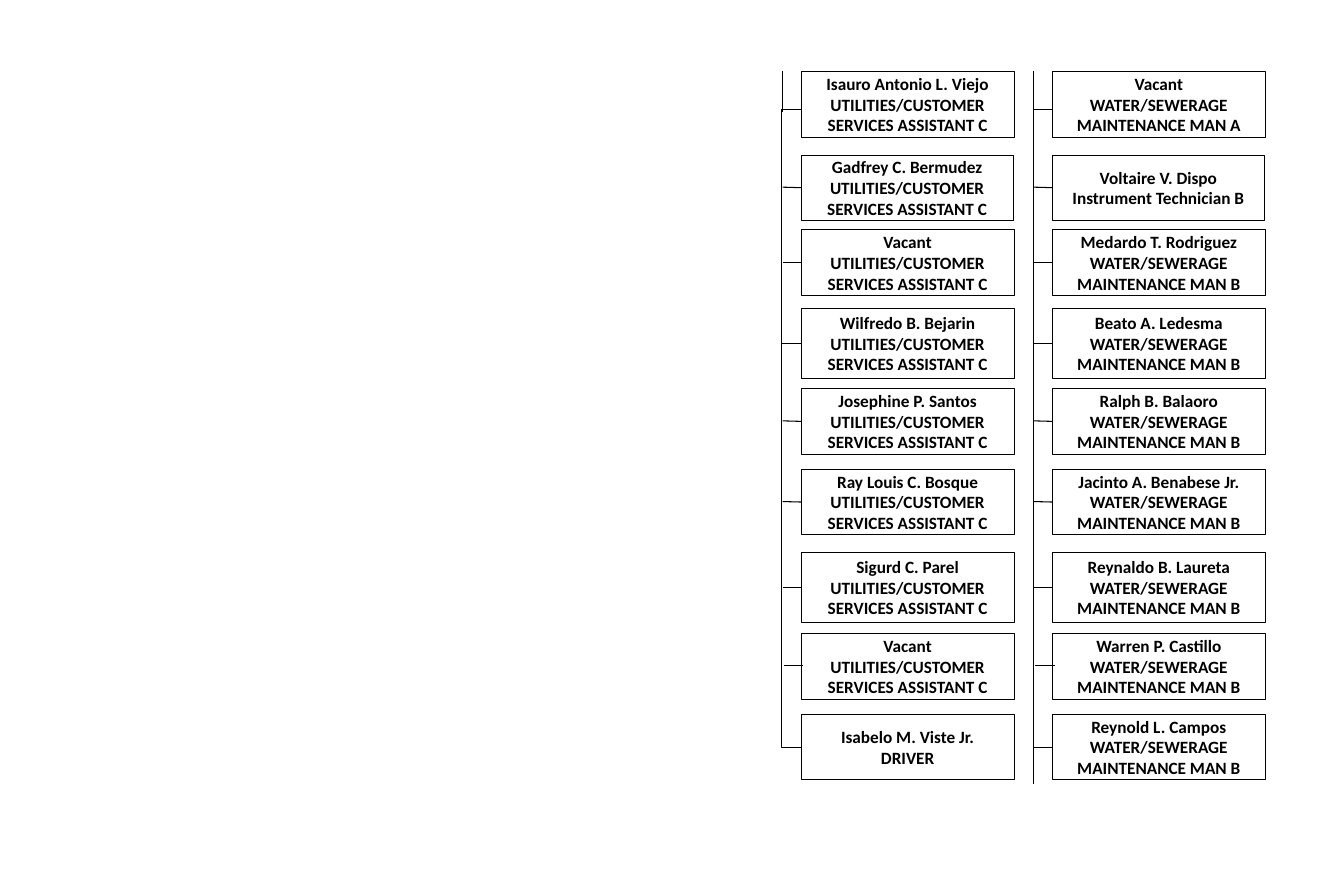
"""Build the two staff columns of an organisation chart."""

from dataclasses import dataclass

import lxml.etree
import pptx
import pptx.dml.color
import pptx.enum.dml
import pptx.enum.shapes
import pptx.enum.text
import pptx.oxml.ns
import pptx.util
from pptx.shapes.autoshape import Shape
from pptx.shapes.connector import Connector
from pptx.slide import Slide

EMU_PER_PX = 9144
BLACK = "000000"
WHITE = "FFFFFF"
STRAIGHT = pptx.enum.shapes.MSO_CONNECTOR.STRAIGHT
ELBOW = pptx.enum.shapes.MSO_CONNECTOR.ELBOW
RAIL_GAP = 18
BRACKET_GAP = 19
BRACKET_TOP = 106
BRACKET_BOTTOM = 723

ASSISTANT = ("UTILITIES/CUSTOMER", "SERVICES ASSISTANT C")
MAINTENANCE_A = ("WATER/SEWERAGE", "MAINTENANCE MAN A")
MAINTENANCE_B = ("WATER/SEWERAGE", "MAINTENANCE MAN B")


@dataclass(frozen=True)
class Row:
    top: int
    height: int
    width: int = 206
    has_stub: bool = True
    stub_gap: int = RAIL_GAP
    overlap: int = 0


@dataclass(frozen=True)
class Position:
    holder: str
    duties: tuple[str, ...]


@dataclass(frozen=True)
class Column:
    left: int
    positions: tuple[Position, ...]
    rail_spans: tuple[tuple[int, int], ...]


ROWS = (
    Row(69, 64, has_stub=False),
    Row(150, 63, width=205),
    Row(222, 64),
    Row(298, 68, stub_gap=19),
    Row(376, 63),
    Row(454, 63),
    Row(534, 68),
    Row(613, 63, stub_gap=17, overlap=2),
    Row(691, 63, has_stub=False),
)

COLUMNS = (
    Column(
        775,
        (
            Position("Isauro Antonio L. Viejo", ASSISTANT),
            Position("Gadfrey C. Bermudez", ASSISTANT),
            Position("Vacant", ASSISTANT),
            Position("Wilfredo B. Bejarin", ASSISTANT),
            Position("Josephine P. Santos", ASSISTANT),
            Position("Ray Louis C. Bosque", ASSISTANT),
            Position("Sigurd C. Parel", ASSISTANT),
            Position("Vacant", ASSISTANT),
            Position("Isabelo M. Viste Jr.", ("DRIVER",)),
        ),
        ((108, 69),),
    ),
    Column(
        1018,
        (
            Position("Vacant", MAINTENANCE_A),
            Position("Voltaire V. Dispo", ("Instrument Technician B",)),
            Position("Medardo T. Rodriguez", MAINTENANCE_B),
            Position("Beato A. Ledesma", MAINTENANCE_B),
            Position("Ralph B. Balaoro", MAINTENANCE_B),
            Position("Jacinto A. Benabese Jr.", MAINTENANCE_B),
            Position("Reynaldo B. Laureta", MAINTENANCE_B),
            Position("Warren P. Castillo", MAINTENANCE_B),
            Position("Reynold L. Campos", MAINTENANCE_B),
        ),
        ((108, 69), (717, 758)),
    ),
)


def px(length: int) -> pptx.util.Emu:
    return pptx.util.Emu(length * EMU_PER_PX)


def color(value: str) -> pptx.dml.color.RGBColor:
    return pptx.dml.color.RGBColor.from_string(value)


def draw_box(slide: Slide, left: int, row: Row, position: Position) -> Shape:
    shape = slide.shapes.add_shape(
        pptx.enum.shapes.MSO_SHAPE.RECTANGLE,
        px(left), px(row.top), px(row.width), px(row.height),
    )
    shape.shadow.inherit = False
    shape.fill.solid()
    shape.fill.fore_color.rgb = color(WHITE)
    shape.line.color.rgb = color(BLACK)
    shape.line.width = pptx.util.Pt(0.5)
    frame = shape.text_frame
    frame.word_wrap = True
    frame.vertical_anchor = pptx.enum.text.MSO_ANCHOR.MIDDLE
    for index, text in enumerate((position.holder, *position.duties)):
        paragraph = frame.add_paragraph() if index else frame.paragraphs[0]
        paragraph.alignment = pptx.enum.text.PP_ALIGN.CENTER
        run = paragraph.add_run()
        run.text = text
        run.font.name = "Calibri"
        run.font.size = pptx.util.Pt(12)
        run.font.bold = True
        run.font.color.rgb = color(BLACK)
    return shape


def draw_line(
    slide: Slide,
    start: tuple[int, int],
    end: tuple[int, int],
    kind: pptx.enum.shapes.MSO_CONNECTOR = STRAIGHT,
) -> Connector:
    connector = slide.shapes.add_connector(kind, *map(px, start + end))
    connector.line.color.rgb = color(BLACK)
    connector.line.width = pptx.util.Pt(0.75)
    lxml.etree.SubElement(connector.element.spPr, pptx.oxml.ns.qn("a:effectLst"))
    return connector


def draw_bracket(slide: Slide, left: int) -> None:
    connector = draw_line(
        slide, (left + 1, BRACKET_BOTTOM), (left, BRACKET_TOP), ELBOW
    )
    adjustments = next(connector.element.iter(pptx.oxml.ns.qn("a:avLst")))
    guide = lxml.etree.SubElement(adjustments, pptx.oxml.ns.qn("a:gd"))
    guide.set("name", "adj1")
    guide.set("fmla", f"val {(BRACKET_GAP + 1) * 100000}")


def draw_stub(slide: Slide, left: int, row: Row, box: Shape) -> None:
    middle = row.top + row.height // 2
    connector = draw_line(
        slide, (left + row.overlap, middle), (left - row.stub_gap, middle)
    )
    if not row.overlap:
        connector.begin_connect(box, 1)


def draw_column(slide: Slide, column: Column) -> None:
    for row, position in zip(ROWS, column.positions):
        box = draw_box(slide, column.left, row, position)
        if row.has_stub:
            draw_stub(slide, column.left, row, box)
    draw_bracket(slide, column.left)
    rail = column.left - RAIL_GAP
    for start, end in column.rail_spans:
        draw_line(slide, (rail, start), (rail, end))


def main() -> None:
    presentation = pptx.Presentation()
    presentation.slide_width = px(1300)
    presentation.slide_height = px(850)
    slide = presentation.slides.add_slide(presentation.slide_layouts[6])
    slide.background.fill.solid()
    slide.background.fill.fore_color.rgb = color(WHITE)
    for column in COLUMNS:
        draw_column(slide, column)
    presentation.save("out.pptx")


if __name__ == "__main__":
    main()
